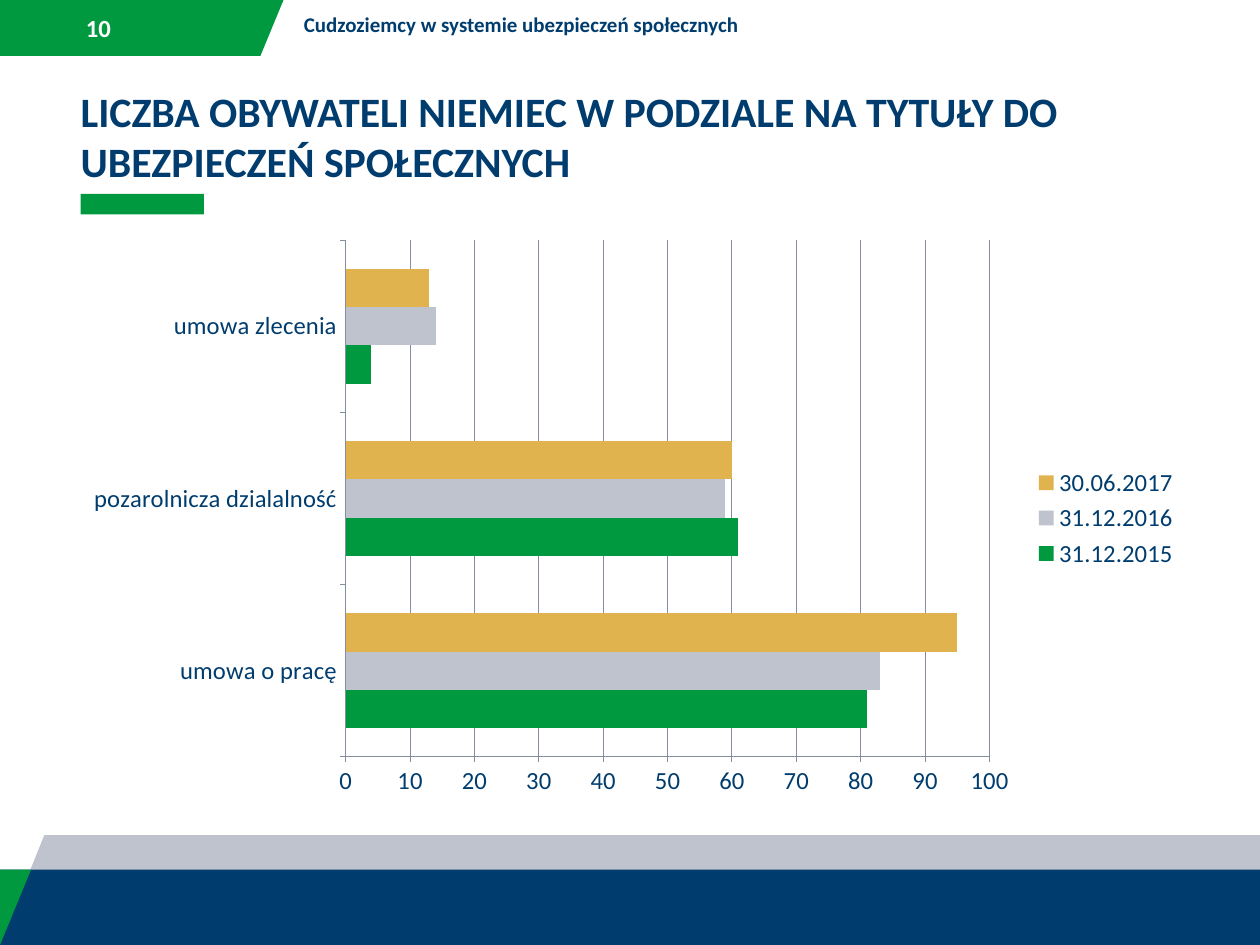
from pptx import Presentation
from pptx.chart.data import CategoryChartData
from pptx.dml.color import RGBColor
from pptx.enum import chart as ch, shapes, text
from pptx.util import Inches, Pt

W, H = 14.22, 10.67
FONT = "Calibri"
COLORS = {"navy": "003D6E", "green": "00993F", "grey": "BEC3CE",
          "gold": "E1B34F", "line": "868DA0", "white": "FFFFFF"}


def rgb(name):
    return RGBColor.from_string(COLORS[name])


def paint(sp, color):
    sp.shadow.inherit = False
    sp.fill.solid()
    sp.fill.fore_color.rgb = rgb(color)
    sp.line.fill.background()


def add_polygon(s, points, color):
    pts = [(Inches(x), Inches(y)) for x, y in points]
    fb = s.shapes.build_freeform(*pts[0])
    fb.add_line_segments(pts[1:], close=True)
    paint(fb.convert_to_shape(), color)


def add_rect(s, x, y, w, h, color):
    sp = s.shapes.add_shape(shapes.MSO_SHAPE.RECTANGLE,
                            Inches(x), Inches(y), Inches(w), Inches(h))
    paint(sp, color)


def style_font(font, size, color, bold=False):
    font.name, font.size, font.bold = FONT, Pt(size), bold
    font.color.rgb = rgb(color)


def write(sp, box, content, size, color, anchor=text.MSO_ANCHOR.TOP):
    sp.left, sp.top, sp.width, sp.height = (Inches(v) for v in box)
    tf = sp.text_frame
    tf.word_wrap = True
    tf.auto_size = text.MSO_AUTO_SIZE.NONE
    tf.vertical_anchor = anchor
    p = tf.paragraphs[0]
    p.alignment = text.PP_ALIGN.LEFT
    p.line_spacing = 1.0
    p.space_before = Pt(0)
    r = p.add_run()
    r.text = content
    style_font(r.font, size, color, bold=True)
    return tf


def add_text(s, box, *args, **kwargs):
    sp = s.shapes.add_textbox(*(Inches(v) for v in box))
    return write(sp, box, *args, **kwargs)


def add_bar_chart(s, box, categories, series):
    data = CategoryChartData()
    data.categories = categories
    for name, values, _ in series:
        data.add_series(name, values)
    chart = s.shapes.add_chart(ch.XL_CHART_TYPE.BAR_CLUSTERED,
                               *(Inches(v) for v in box), data).chart
    style_font(chart.font, 20, "navy")
    chart.has_title = False
    chart.has_legend = True
    chart.legend.position = ch.XL_LEGEND_POSITION.RIGHT
    chart.legend.include_in_layout = False

    plot = chart.plots[0]
    plot.gap_width = 150
    plot.vary_by_categories = False
    for ser, (_, _, color) in zip(plot.series, series):
        ser.format.fill.solid()
        ser.format.fill.fore_color.rgb = rgb(color)

    val = chart.value_axis
    val.minimum_scale, val.maximum_scale, val.major_unit = 0, 100, 10
    val.has_major_gridlines = True
    lines = [val.major_gridlines.format.line]
    for axis in (chart.category_axis, val):
        axis.major_tick_mark = ch.XL_TICK_MARK.OUTSIDE
        lines.append(axis.format.line)
    for line in lines:
        line.color.rgb = rgb("line")
        line.width = Pt(0.75)


def main():
    prs = Presentation()
    prs.slide_width, prs.slide_height = Inches(W), Inches(H)
    s = prs.slides.add_slide(prs.slide_layouts[5])

    # Header and footer bands
    add_polygon(s, [(0, 0), (3.2, 0), (2.94, 0.63), (0, 0.63)], "green")
    add_polygon(s, [(0, H), (0.5, 9.43), (W, 9.43), (W, H)], "grey")
    add_rect(s, 0, 9.82, W, H - 9.82, "navy")
    add_polygon(s, [(0, 9.82), (0.35, 9.82), (0, H)], "green")

    # Page number, running header and title
    tf = add_text(s, (0.91, 0.09, 0.85, 0.45), "10", 20, "white",
                  anchor=text.MSO_ANCHOR.MIDDLE)
    tf.margin_left = tf.margin_right = Inches(0.06)
    tf.margin_top = tf.margin_bottom = Inches(0.06)
    add_text(s, (3.33, 0.08, 10.08, 0.42),
             "Cudzoziemcy w systemie ubezpieczeń społecznych", 17, "navy")
    write(s.shapes.title, (0.81, 0.92, 12.6, 1.18),
          "LICZBA OBYWATELI NIEMIEC W PODZIALE NA TYTUŁY DO "
          "UBEZPIECZEŃ SPOŁECZNYCH", 34, "navy")
    add_rect(s, 0.91, 2.19, 1.39, 0.23, "green")

    # Chart of insured citizens by title
    add_bar_chart(s, (0.81, 2.58, 12.6, 6.54),
                  ["umowa o pracę", "pozarolnicza dzialalność", "umowa zlecenia"],
                  [("31.12.2015", (81, 61, 4), "green"),
                   ("31.12.2016", (83, 59, 14), "grey"),
                   ("30.06.2017", (95, 60, 13), "gold")])

    prs.save("out.pptx")


if __name__ == "__main__":
    main()
